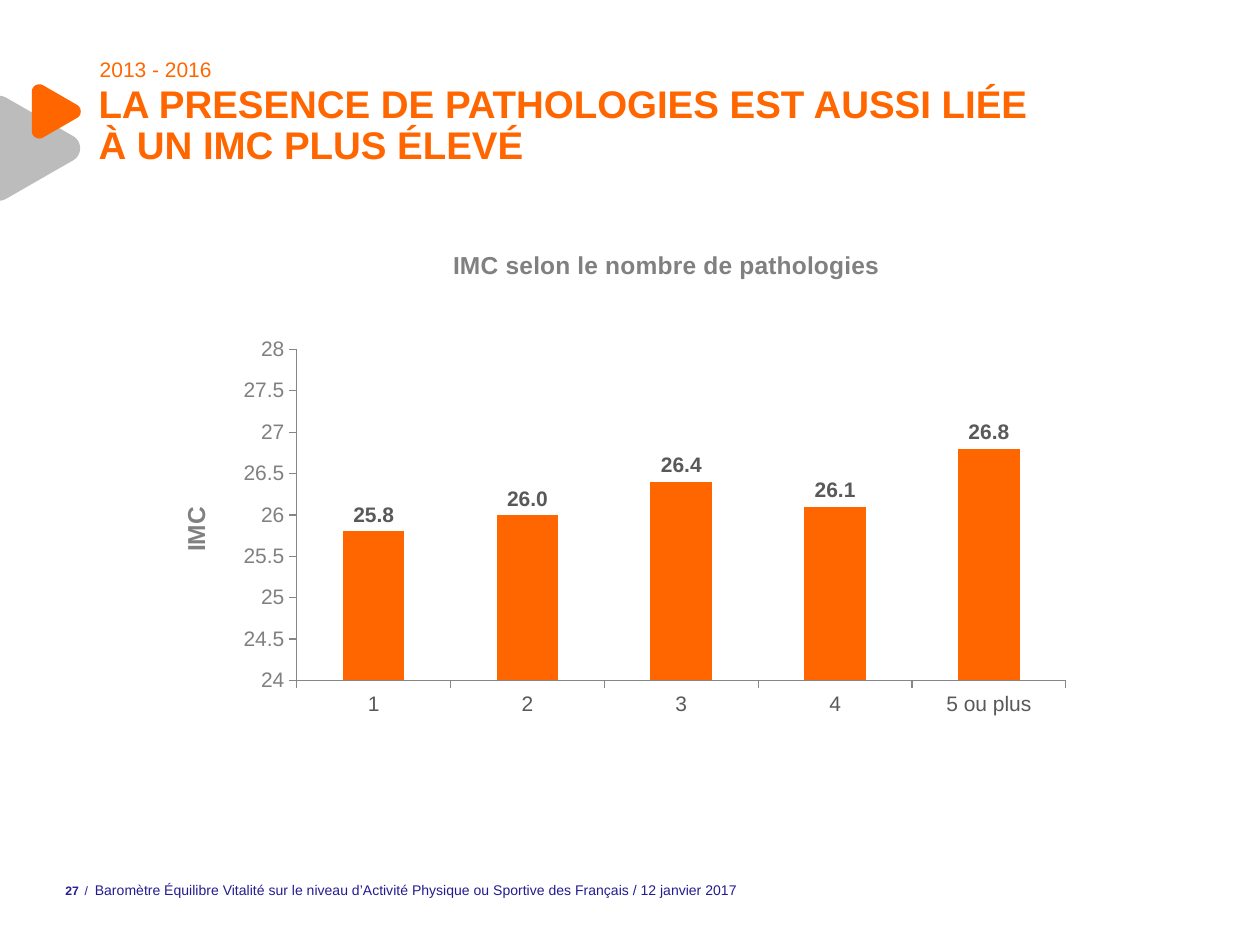
import math

import lxml.etree
import pptx
import pptx.chart.data
import pptx.dml.color
import pptx.enum.chart
import pptx.enum.text
import pptx.oxml
import pptx.oxml.ns
import pptx.util

Pt = pptx.util.Pt
qn = pptx.oxml.ns.qn
ALIGN = pptx.enum.text.PP_ALIGN
ANCHOR = pptx.enum.text.MSO_ANCHOR
COLOURS = {
    "orange": "FF6600",
    "silver": "BCBCBC",
    "navy": "231C91",
    "grey": "808080",
    "dark": "595959",
    "line": "868686",
}


class Deck:
    face = "Arial"

    def __init__(self):
        self.file = pptx.Presentation()
        self.file.slide_width, self.file.slide_height = Pt(720), Pt(540)
        self.slide = self.file.slides.add_slide(self.file.slide_layouts[5])

    def shade(self, name):
        return pptx.dml.color.RGBColor.from_string(COLOURS[name])

    def style(self, font, size, name, bold=False):
        font.name, font.size, font.bold = self.face, Pt(size), bold
        font.color.rgb = self.shade(name)

    def fill(self, shape, text, box, size, name, bold=False, anchor=ANCHOR.TOP):
        shape.left, shape.top, shape.width, shape.height = map(Pt, box)
        frame = shape.text_frame
        frame.text = text
        frame.word_wrap = True
        frame.auto_size = pptx.enum.text.MSO_AUTO_SIZE.NONE
        frame.vertical_anchor = anchor
        frame.margin_left = frame.margin_right = Pt(3)
        frame.margin_top = frame.margin_bottom = 0
        part = frame.paragraphs[0]
        part.alignment = ALIGN.LEFT
        for run in part.runs:
            self.style(run.font, size, name, bold)
        return part

    def title(self, text, box, size, name):
        part = self.fill(self.slide.shapes.title, text, box, size, name, True)
        part.line_spacing = 0.9

    def text(self, text, box, size, name, **rest):
        shape = self.slide.shapes.add_textbox(0, 0, 0, 0)
        return self.fill(shape, text, box, size, name, **rest)

    def arrow(self, box, curve, name):
        left, top, width, height = box
        mids = [
            (left + curve, top + curve, 180),
            (left + width - curve, top + height / 2, 300),
            (left + curve, top + height - curve, 60),
        ]
        points = []
        for x, y, start in mids:
            for step in range(0, 121, 10):
                turn = math.radians(start + step)
                points.append((x + curve * math.cos(turn), y + curve * math.sin(turn)))
        points = [(Pt(x), Pt(y)) for x, y in points]
        path = self.slide.shapes.build_freeform(*points[0])
        path.add_line_segments(points[1:], close=True)
        shape = path.convert_to_shape()
        shape.shadow.inherit = False
        shape.fill.solid()
        shape.fill.fore_color.rgb = self.shade(name)
        shape.line.fill.background()

    def place(self, node, index, **parts):
        old = node.find(qn("c:layout"))
        if old is not None:
            node.remove(old)
        layout = lxml.etree.Element(qn("c:layout"))
        manual = lxml.etree.SubElement(layout, qn("c:manualLayout"))
        for key, value in parts.items():
            lxml.etree.SubElement(manual, qn("c:" + key)).set("val", str(value))
        node.insert(index, layout)

    def head(self, title, text, x, y):
        title.text_frame.text = text
        for run in title.text_frame.paragraphs[0].runs:
            self.style(run.font, 14, "grey", True)
        self.place(title._element, 1, xMode="edge", yMode="edge", x=x, y=y)

    def axis(self, axis, name):
        axis.has_major_gridlines = False
        axis.major_tick_mark = pptx.enum.chart.XL_TICK_MARK.OUTSIDE
        axis.format.line.color.rgb = self.shade("line")
        axis.format.line.width = Pt(0.75)
        self.style(axis.tick_labels.font, 12, name)

    def chart(self, box, groups, values):
        data = pptx.chart.data.CategoryChartData(number_format="0.0")
        data.categories = groups
        data.add_series("IMC", values)
        kind = pptx.enum.chart.XL_CHART_TYPE.COLUMN_CLUSTERED
        chart = self.slide.shapes.add_chart(kind, *map(Pt, box), data).chart
        self.style(chart.font, 14, "dark")
        chart.has_legend = False
        self.head(chart.chart_title, "IMC selon le nombre de pathologies", 0.35, 0)

        self.axis(chart.category_axis, "dark")
        scale = chart.value_axis
        self.axis(scale, "grey")
        scale.minimum_scale, scale.maximum_scale, scale.major_unit = 24, 28, 0.5
        scale.tick_labels.number_format = "General"
        scale.tick_labels.number_format_is_linked = False
        self.head(scale.axis_title, "IMC", 0.08, 0.49)

        plot = chart.plots[0]
        plot.gap_width = 150
        plot.vary_by_categories = False
        bars = plot.series[0].format.fill
        bars.solid()
        bars.fore_color.rgb = self.shade("orange")
        plot.has_data_labels = True
        labels = plot.data_labels
        labels.show_value = True
        labels.position = pptx.enum.chart.XL_LABEL_POSITION.OUTSIDE_END
        labels.number_format = "#,##0.0"
        labels.number_format_is_linked = False
        self.style(labels.font, 12, "dark", True)
        area = chart._chartSpace.find(".//" + qn("c:plotArea"))
        self.place(area, 0, layoutTarget="inner", xMode="edge", yMode="edge",
                   x=0.2, y=0.2, w=0.76, h=0.63)

    def footer(self, page, text):
        self.text(page, (33.8, 504.7, 14.4, 8.6), 7, "navy", bold=True,
                  anchor=ANCHOR.MIDDLE).alignment = ALIGN.RIGHT
        part = self.text("/\t", (45.4, 501.1, 439.2, 14.4), 7, "navy",
                         anchor=ANCHOR.MIDDLE)
        tabs = lxml.etree.SubElement(part._p.get_or_add_pPr(), qn("a:tabLst"))
        tab = lxml.etree.SubElement(tabs, qn("a:tab"))
        tab.set("pos", str(Pt(5.8)))
        tab.set("algn", "l")
        run = part.add_run()
        run.text = text
        self.style(run.font, 8, "navy")


def main():
    deck = Deck()
    deck.footer("27", "Baromètre Équilibre Vitalité sur le niveau d’Activité Physique "
                      "ou Sportive des Français / 12 janvier 2017")
    deck.title("LA PRESENCE DE PATHOLOGIES EST AUSSI LIÉE\vÀ UN IMC PLUS ÉLEVÉ",
               (53.3, 48.6, 612, 62.6), 22, "orange")
    deck.chart((54, 139.7, 578.2, 300.2), ["1", "2", "3", "4", "5 ou plus"],
               [25.8, 26.0, 26.4, 26.1, 26.8])
    deck.arrow((-8.6, 54.7, 54.4, 60), 8, "silver")
    deck.arrow((18.2, 48.2, 28, 31), 4.3, "orange")
    deck.text("2013 - 2016", (54, 32.4, 612, 14.4), 12, "orange")
    deck.file.save("out.pptx")


if __name__ == "__main__":
    main()
